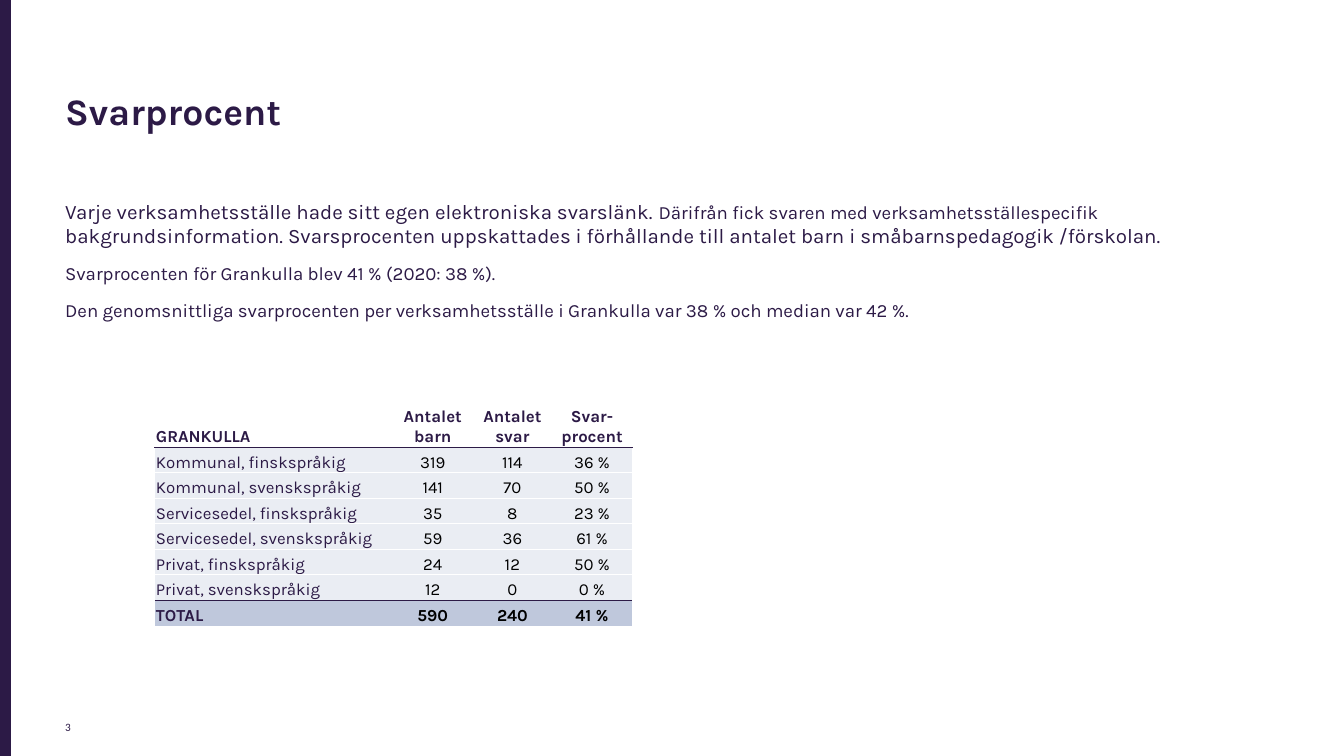
from lxml import etree
from pptx import Presentation
from pptx.dml.color import RGBColor
from pptx.enum.shapes import MSO_SHAPE
from pptx.enum.text import MSO_ANCHOR, PP_ALIGN
from pptx.oxml.ns import qn
from pptx.util import Emu, Pt

RECTANGLE = MSO_SHAPE.RECTANGLE
TOP, MIDDLE, BOTTOM = MSO_ANCHOR.TOP, MSO_ANCHOR.MIDDLE, MSO_ANCHOR.BOTTOM
LEFT, CENTER = PP_ALIGN.LEFT, PP_ALIGN.CENTER

PLUM = RGBColor(0x2C, 0x1A, 0x46)
BLACK = RGBColor(0x00, 0x00, 0x00)
WHITE = RGBColor(0xFF, 0xFF, 0xFF)
PALE = RGBColor(0xEA, 0xED, 0xF3)
BLUE_GREY = RGBColor(0xBF, 0xC8, 0xDC)
FONT, NUMBER_FONT = "Karla", "Calibri"

# Content: paragraphs are lists of (text, size)
TITLE = [[("Svarprocent", 20)]]
BODY = [
    [
        ("Varje verksamhetsställe hade sitt egen elektroniska svarslänk. ", 11),
        ("Därifrån fick svaren med verksamhetsställespecifik ", 10),
        ("bakgrundsinformation. Svarsprocenten uppskattades i förhållande till "
         "antalet barn i småbarnspedagogik /förskolan.", 11),
    ],
    [("Svarprocenten för Grankulla blev 41 % (2020: 38 %).", 10)],
    [("Den genomsnittliga svarprocenten per verksamhetsställe i Grankulla "
      "var 38 % och median var 42 %.", 10)],
]
PAGE_NUMBER = [[("3", 6)]]
RESPONSES = [
    ("GRANKULLA", "Antalet barn", "Antalet svar", "Svar-procent"),
    ("Kommunal, finskspråkig", "319", "114", "36 %"),
    ("Kommunal, svenskspråkig", "141", "70", "50 %"),
    ("Servicesedel, finskspråkig", "35", "8", "23 %"),
    ("Servicesedel, svenskspråkig", "59", "36", "61 %"),
    ("Privat, finskspråkig", "24", "12", "50 %"),
    ("Privat, svenskspråkig", "12", "0", "0 %"),
    ("TOTAL", "590", "240", "41 %"),
]

# Layout in px
PAGE_WIDTH, PAGE_HEIGHT = 1344, 756
MARGIN, TEXT_WIDTH = 52, 1159
TABLE_LEFT, TABLE_TOP, TABLE_WIDTH, TABLE_HEIGHT = 155, 394, 477, 232
LABEL_WIDTH, HEADER_HEIGHT = 238, 53


def px(length):
    return Emu(round(length * 914400 / 134.4))


def add_span(para, text, size, color=PLUM, font=FONT, bold=False):
    span = para.add_run()
    span.text = text
    span.font.name = font
    span.font.size = Pt(size)
    span.font.bold = bold
    span.font.color.rgb = color


def add_text(page, left, top, width, height, paragraphs, anchor, **style):
    box = page.shapes.add_textbox(px(left), px(top), px(width), px(height))
    frame = box.text_frame
    frame.word_wrap = True
    frame.vertical_anchor = anchor
    for index, spans in enumerate(paragraphs):
        para = frame.add_paragraph() if index else frame.paragraphs[0]
        if index:
            para.space_before = Pt(7.5)
        for text, size in spans:
            add_span(para, text, size, **style)
    return frame


def set_borders(cell, side, top, bottom):
    """Each border is (color, points), or None for no line."""
    properties = cell._tc.get_or_add_tcPr()
    edges = (("a:lnL", side), ("a:lnR", side), ("a:lnT", top), ("a:lnB", bottom))
    for position, (tag, border) in enumerate(edges):
        line = etree.Element(qn(tag))
        if border:
            color, points = border
            line.set("w", str(Pt(points)))
            fill = etree.SubElement(line, qn("a:solidFill"))
            etree.SubElement(fill, qn("a:srgbClr")).set("val", str(color))
        else:
            line.set("w", "0")
            etree.SubElement(line, qn("a:noFill"))
        properties.insert(position, line)


def add_response_table(page):
    row_count, column_count = len(RESPONSES), len(RESPONSES[0])
    last = row_count - 1
    table = page.shapes.add_table(
        row_count, column_count, px(TABLE_LEFT), px(TABLE_TOP),
        px(TABLE_WIDTH), px(TABLE_HEIGHT)).table
    table.first_row = table.horz_banding = False

    value_width = (TABLE_WIDTH - LABEL_WIDTH) / (column_count - 1)
    for index, column in enumerate(table.columns):
        column.width = px(value_width if index else LABEL_WIDTH)
    row_height = (TABLE_HEIGHT - HEADER_HEIGHT) / last
    for index, row in enumerate(table.rows):
        row.height = px(row_height if index else HEADER_HEIGHT)

    # Lines between rows: dark under the header and above the total
    dark, light = (PLUM, 0.5), (WHITE, 0.5)
    rules = [(WHITE, 1), dark] + [light] * (row_count - 3) + [dark, None]

    for r, texts in enumerate(RESPONSES):
        header, total = r == 0, r == last
        for c, text in enumerate(texts):
            cell = table.cell(r, c)
            cell.margin_left = cell.margin_right = cell.margin_top = px(1)
            cell.margin_bottom = 0
            cell.vertical_anchor = BOTTOM
            if header:
                cell.fill.background()
            else:
                cell.fill.solid()
                cell.fill.fore_color.rgb = BLUE_GREY if total else PALE
            set_borders(cell, (WHITE, 1) if header else None, rules[r], rules[r + 1])
            para = cell.text_frame.paragraphs[0]
            para.alignment = CENTER if c else LEFT
            add_span(para, text, 9, BLACK if c and not header else PLUM,
                     bold=header or total)


def main():
    deck = Presentation()
    deck.slide_width, deck.slide_height = px(PAGE_WIDTH), px(PAGE_HEIGHT)
    page = deck.slides.add_slide(deck.slide_layouts[6])

    # Side band
    band = page.shapes.add_shape(RECTANGLE, 0, 0, px(11), px(PAGE_HEIGHT))
    band.shadow.inherit = False
    band.fill.solid()
    band.fill.fore_color.rgb = PLUM
    band.line.fill.background()

    # Title, body and page number
    title = add_text(page, MARGIN, 40, TEXT_WIDTH, 146, TITLE, MIDDLE, bold=True)
    title.paragraphs[0].line_spacing = 0.9
    add_text(page, MARGIN, 192, TEXT_WIDTH, 480, BODY, TOP)
    add_text(page, MARGIN, 700, 55, 40, PAGE_NUMBER, BOTTOM, font=NUMBER_FONT)

    add_response_table(page)
    deck.save("out.pptx")


if __name__ == "__main__":
    main()
